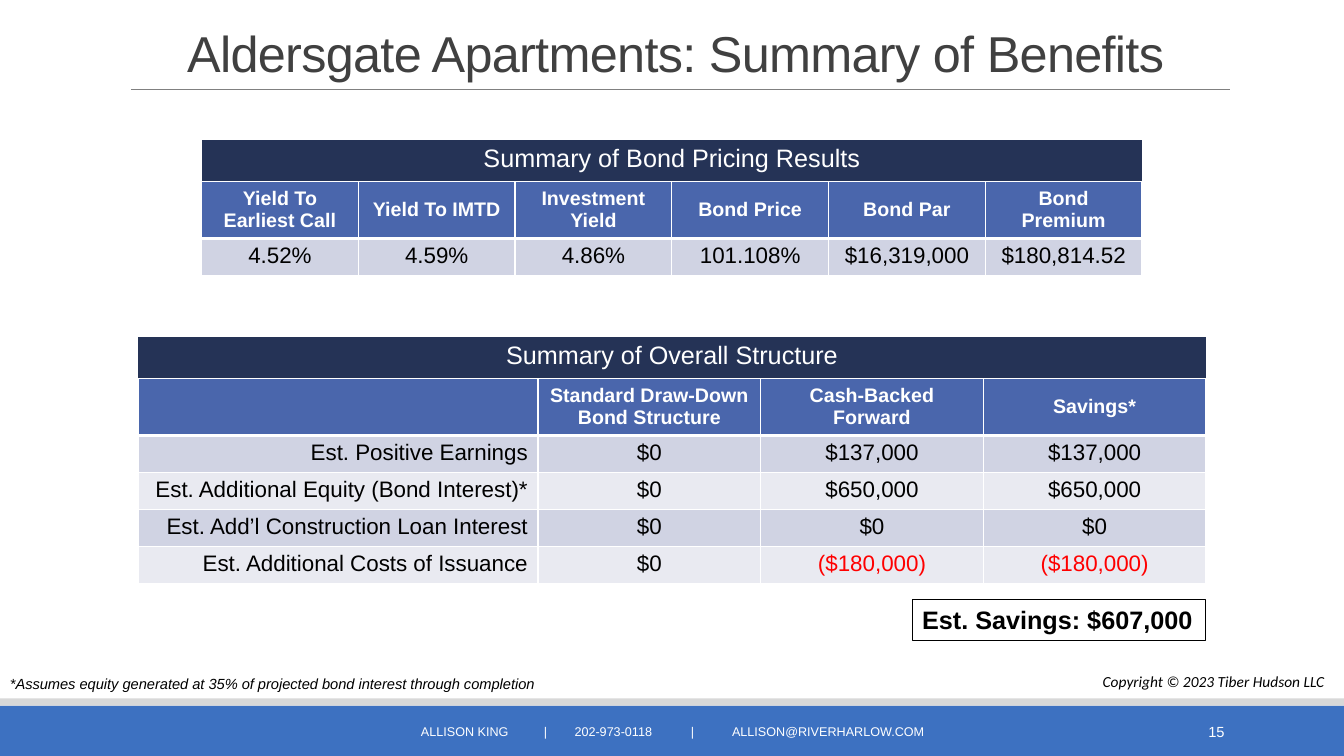
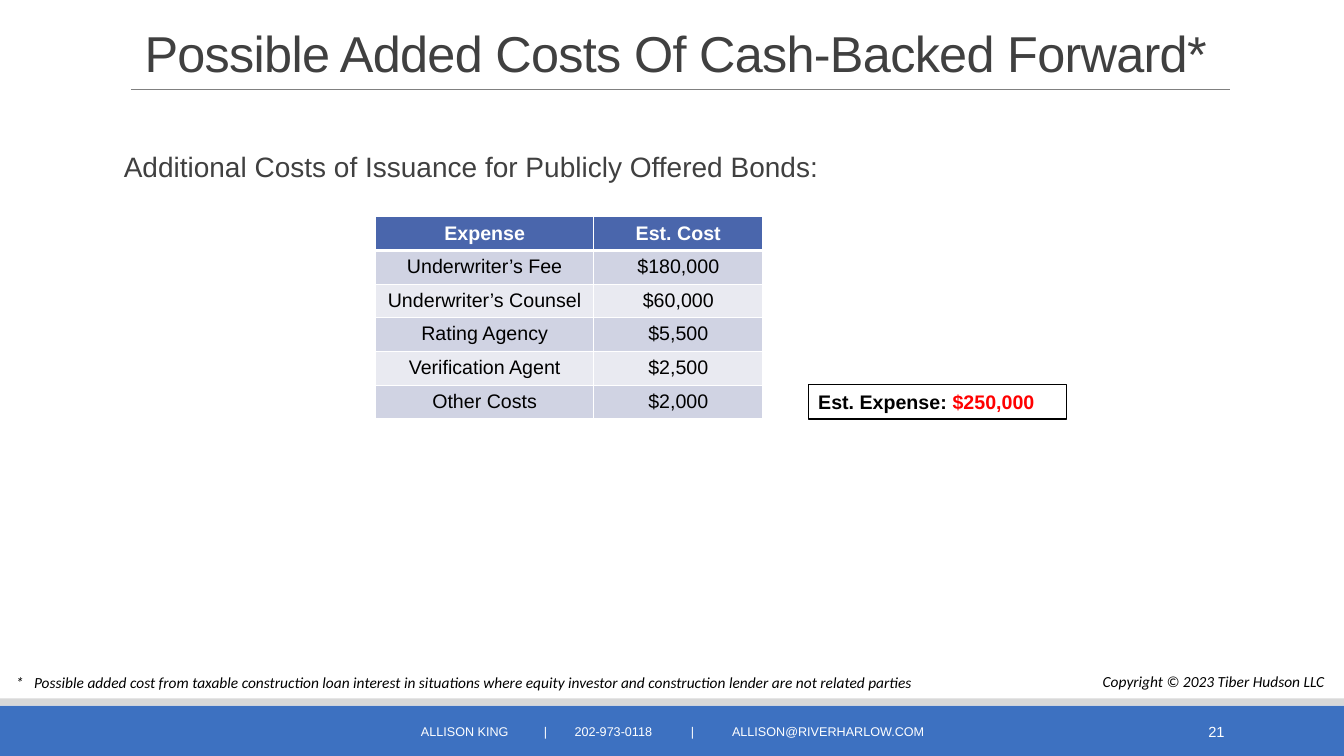
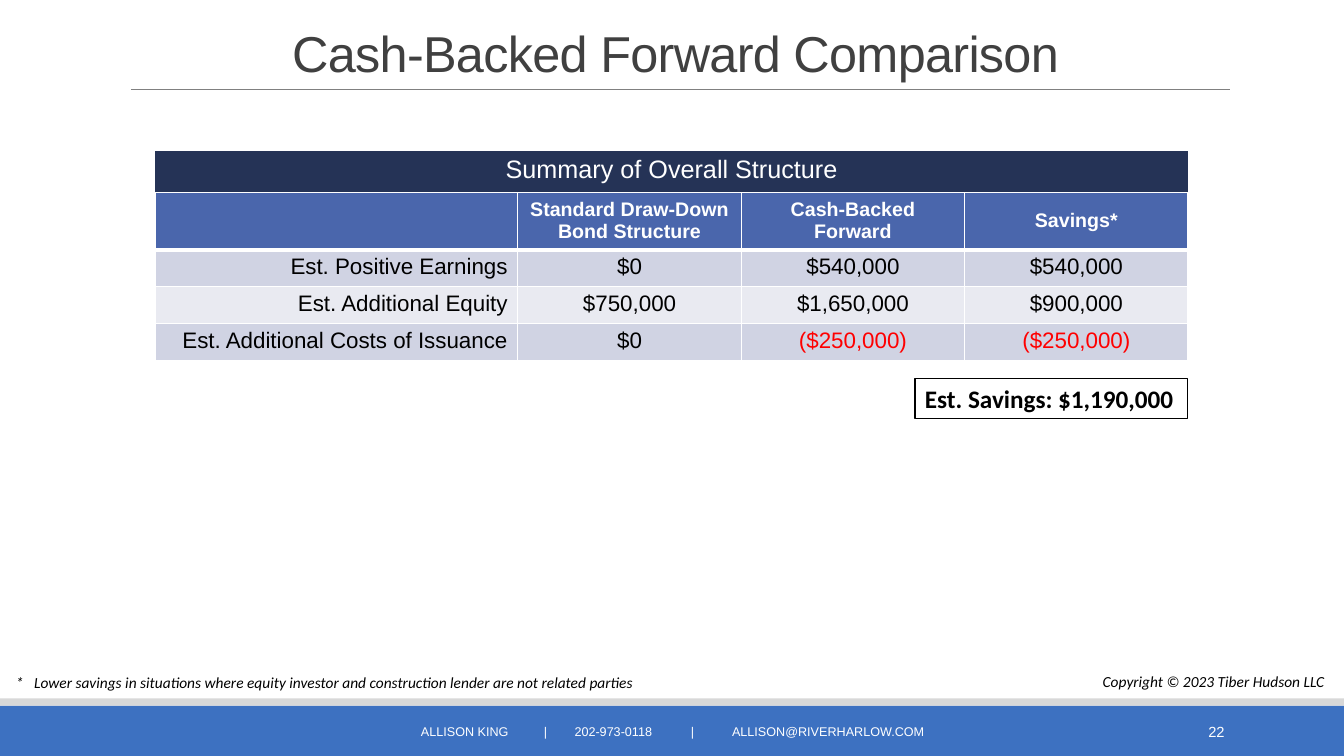
import pptx
import pptx.dml.color
import pptx.enum.shapes
import pptx.enum.text
import pptx.oxml.ns
import pptx.util
from lxml import etree

Cm, Pt = pptx.util.Cm, pptx.util.Pt
RGBColor = pptx.dml.color.RGBColor
ALIGN = pptx.enum.text.PP_ALIGN
ANCHOR = pptx.enum.text.MSO_ANCHOR
RECTANGLE = pptx.enum.shapes.MSO_SHAPE.RECTANGLE
qn = pptx.oxml.ns.qn

# Colours
WHITE = RGBColor(0xFF, 0xFF, 0xFF)
BLACK = RGBColor(0x00, 0x00, 0x00)
RED = RGBColor(0xFF, 0x00, 0x00)
CHARCOAL = RGBColor(0x40, 0x40, 0x40)
RULE_GREY = RGBColor(0x80, 0x80, 0x80)
BAND_GREY = RGBColor(0xD8, 0xD8, 0xD8)
BAND_BLUE = RGBColor(0x3D, 0x71, 0xC1)
NAVY = RGBColor(0x25, 0x33, 0x56)
HEADER_BLUE = RGBColor(0x4A, 0x66, 0xAC)
ROW_TINTS = [RGBColor(0xD0, 0xD3, 0xE3), RGBColor(0xE9, 0xEA, 0xF1)]

# Sizes in centimetres
BANNER_HEIGHT = 1.05
HEADER_HEIGHT = 1.44
ROW_HEIGHT = 0.93
CONTACT_TABS = [3.1, 3.87, 6.8, 7.84]
STRUCTURE_HEADER = ["", "Standard Draw-Down Bond Structure", "Cash-Backed Forward", "Savings*"]

# Content
pages = [
    {
        "title": "Aldersgate Apartments: Summary of Benefits",
        "number": "15",
        "grids": [
            {
                "left": 3.48, "top": 9.53, "widths": [10.08] + [5.61] * 3,
                "banner": "Summary of Overall Structure",
                "rows": [
                    STRUCTURE_HEADER,
                    ["Est. Positive Earnings", "$0", "$137,000", "$137,000"],
                    ["Est. Additional Equity (Bond Interest)*", "$0", "$650,000", "$650,000"],
                    ["Est. Add’l Construction Loan Interest", "$0", "$0", "$0"],
                    ["Est. Additional Costs of Issuance", "$0", "($180,000)", "($180,000)"],
                ],
            },
            {
                "left": 5.08, "top": 4.57, "widths": [3.95] * 6,
                "banner": "Summary of Bond Pricing Results", "label_align": ALIGN.CENTER,
                "rows": [
                    ["Yield To Earliest Call", "Yield To IMTD", "Investment Yield",
                     "Bond Price", "Bond Par", "Bond Premium"],
                    ["4.52%", "4.59%", "4.86%", "101.108%", "$16,319,000", "$180,814.52"],
                ],
            },
        ],
        "total": {"place": (22.99, 15.11, 7.39, 1.02), "size": 18, "font": "Arial",
                  "parts": [("Est. Savings: $607,000", BLACK)]},
        "footnote": {"place": (0, 16.87, 14.27, 0.74), "size": 10.5, "font": "Arial",
                     "text": "*Assumes equity generated at 35% of projected bond interest through completion"},
    },
    {
        "title": "Possible Added Costs Of Cash-Backed Forward*",
        "number": "21",
        "lead": "Additional Costs of Issuance for Publicly Offered Bonds:",
        "grids": [
            {
                "left": 9.47, "top": 5.46, "widths": [5.49, 4.27], "label_align": ALIGN.CENTER,
                "header_height": 0.85, "row_height": 0.85, "size": 14,
                "rows": [
                    ["Expense", "Est. Cost"],
                    ["Underwriter’s Fee", "$180,000"],
                    ["Underwriter’s Counsel", "$60,000"],
                    ["Rating Agency", "$5,500"],
                    ["Verification Agent", "$2,500"],
                    ["Other Costs", "$2,000"],
                ],
            },
        ],
        "total": {"place": (20.37, 9.7, 6.5, 0.86), "size": 14, "font": "Arial",
                  "parts": [("Est. Expense: ", BLACK), ("$250,000", RED)]},
        "footnote": {"place": (0.15, 16.84, 28.4, 0.74), "size": 11, "font": "Calibri",
                     "text": "*\tPossible added cost from taxable construction loan interest in situations "
                             "where equity investor and construction lender are not related parties"},
    },
    {
        "title": "Cash-Backed Forward Comparison",
        "number": "22",
        "grids": [
            {
                "left": 3.91, "top": 4.85, "widths": [9.14] + [5.63] * 3,
                "banner": "Summary of Overall Structure",
                "rows": [
                    STRUCTURE_HEADER,
                    ["Est. Positive Earnings", "$0", "$540,000", "$540,000"],
                    ["Est. Additional Equity", "$750,000", "$1,650,000", "$900,000"],
                    ["Est. Additional Costs of Issuance", "$0", "($250,000)", "($250,000)"],
                ],
            },
        ],
        "total": {"place": (23.06, 9.53, 6.88, 1.02), "size": 18, "font": "Calibri",
                  "parts": [("Est. Savings: $1,190,000", BLACK)]},
        "footnote": {"place": (0.15, 16.84, 28.4, 0.74), "size": 11, "font": "Calibri",
                     "text": "*\tLower savings in situations where equity investor and "
                             "construction lender are not related parties"},
    },
]


def write(frame, parts, size, align=ALIGN.LEFT, font="Arial", tabs=(), **styles):
    """Fill the first paragraph with (text, colour) runs, after setting its tab stops."""
    paragraph = frame.paragraphs[0]
    paragraph.alignment = align
    if tabs:
        stops = etree.SubElement(paragraph._p.get_or_add_pPr(), qn("a:tabLst"))
        for position in tabs:
            etree.SubElement(stops, qn("a:tab"), pos=str(Cm(position)), algn="l")
    for text, colour in parts:
        run = paragraph.add_run()
        run.text = text
        run.font.color.rgb = colour
        for name, value in {"name": font, "size": Pt(size), **styles}.items():
            setattr(run.font, name, value)
    return paragraph


def paint_cell(cell, fill, edges):
    """Set the cell's borders, as widths in points by edge (0 for none), and its fill."""
    properties = cell._tc.get_or_add_tcPr()
    for edge, width in zip(("lnL", "lnR", "lnT", "lnB"), edges):
        line = etree.SubElement(properties, qn("a:" + edge), w=str(Pt(width)))
        if width:
            colour = etree.SubElement(line, qn("a:solidFill"))
            etree.SubElement(colour, qn("a:srgbClr"), val=str(WHITE))
        else:
            etree.SubElement(line, qn("a:noFill"))
    cell.fill.solid()
    cell.fill.fore_color.rgb = fill


deck = pptx.Presentation()
deck.slide_width, deck.slide_height = Cm(33.87), Cm(19.05)

for page in pages:
    slide = deck.slides.add_slide(deck.slide_layouts[5])
    shapes = slide.shapes

    # Bands at the foot
    for top, height, colour in [(17.78, 1.27, BAND_BLUE), (17.6, 0.18, BAND_GREY)]:
        band = shapes.add_shape(RECTANGLE, 0, Cm(top), deck.slide_width, Cm(height))
        band.shadow.inherit = False
        band.fill.solid()
        band.fill.fore_color.rgb = colour
        band.line.fill.background()

    # Title and the rule under it
    rule = shapes.add_connector(pptx.enum.shapes.MSO_CONNECTOR.STRAIGHT,
                                Cm(3.3), Cm(2.26), Cm(30.99), Cm(2.26))
    rule.line.color.rgb = RULE_GREY
    rule.line.width = Pt(0.5)
    etree.SubElement(rule._element.spPr, qn("a:effectLst"))

    title = shapes.title
    title.left, title.top, title.width, title.height = Cm(3.05), Cm(0.79), Cm(27.94), Cm(1.32)
    title.text_frame.vertical_anchor = ANCHOR.MIDDLE
    title.text_frame.auto_size = pptx.enum.text.MSO_AUTO_SIZE.NONE
    heading = write(title.text_frame, [(page["title"], CHARCOAL)], 36, ALIGN.CENTER)
    heading.line_spacing = 0.85
    heading.runs[0].font._element.set("spc", "-50")

    # Page number, contact line, copyright and footnote
    note = page["footnote"]
    contact = "ALLISON KING\t|\t202-973-0118\t|\tALLISON@RIVERHARLOW.COM"
    small_texts = [
        ((27.48, 17.93, 3.63, 1.02), page["number"], WHITE, ANCHOR.MIDDLE, True,
         {"size": 10.5, "align": ALIGN.RIGHT}),
        ((10.36, 17.93, 13.39, 1.02), contact, WHITE, ANCHOR.MIDDLE, True,
         {"size": 9, "tabs": CONTACT_TABS}),
        ((27.54, 16.81, 6.15, 0.74), "Copyright © 2023 Tiber Hudson LLC", BLACK, ANCHOR.TOP, False,
         {"size": 11, "font": "Calibri", "italic": True}),
        (note["place"], note["text"], BLACK, ANCHOR.TOP, True,
         {"size": note["size"], "font": note["font"], "italic": True,
          "tabs": [0.46] if "\t" in note["text"] else []}),
    ]
    for place, text, colour, anchor, wrap, style in small_texts:
        frame = shapes.add_textbox(*map(Cm, place)).text_frame
        frame.word_wrap = wrap
        frame.vertical_anchor = anchor
        write(frame, [(text, colour)], **style)

    # Lead sentence
    if "lead" in page:
        lead = shapes.add_textbox(Cm(2.87), Cm(3.73), Cm(29.18), Cm(1.2)).text_frame
        lead.word_wrap = True
        write(lead, [(page["lead"], CHARCOAL)], 20).line_spacing = 0.9

    # Tables, each with its banner
    for grid in page["grids"]:
        rows, widths = grid["rows"], grid["widths"]
        heights = [grid.get("header_height", HEADER_HEIGHT)]
        heights += [grid.get("row_height", ROW_HEIGHT)] * (len(rows) - 1)
        table = shapes.add_table(len(rows), len(widths), Cm(grid["left"]), Cm(grid["top"]),
                                 Cm(sum(widths)), Cm(sum(heights))).table
        for column, width in zip(table.columns, widths):
            column.width = Cm(width)
        for r, (values, height) in enumerate(zip(rows, heights)):
            table.rows[r].height = Cm(height)
            for c, value in enumerate(values):
                cell = table.cell(r, c)
                if r == 0:
                    paint_cell(cell, HEADER_BLUE, (1, 1, 1, 3))
                    cell.vertical_anchor = ANCHOR.MIDDLE
                    if value:
                        write(cell.text_frame, [(value, WHITE)], 14, ALIGN.CENTER, bold=True)
                else:
                    paint_cell(cell, ROW_TINTS[(r - 1) % 2], (1, 1, 3 if r == 1 else 1, 1))
                    align = grid.get("label_align", ALIGN.RIGHT) if c == 0 else ALIGN.CENTER
                    colour = RED if value.startswith("(") else BLACK
                    write(cell.text_frame, [(value, colour)], grid.get("size", 16), align, bold=False)

        if "banner" in grid:
            banner = shapes.add_table(1, 1, Cm(grid["left"]), Cm(grid["top"] - BANNER_HEIGHT),
                                      Cm(sum(widths)), Cm(BANNER_HEIGHT)).table.cell(0, 0)
            paint_cell(banner, NAVY, (0, 0, 0, 0))
            write(banner.text_frame, [(grid["banner"], WHITE)], 18, ALIGN.CENTER, bold=False)

    # Boxed total
    total = page["total"]
    total_box = shapes.add_shape(RECTANGLE, *map(Cm, total["place"]))
    total_box.shadow.inherit = False
    total_box.fill.background()
    total_box.line.color.rgb = BLACK
    total_box.line.width = Pt(0.75)
    total_box.text_frame.word_wrap = True
    total_box.text_frame.vertical_anchor = ANCHOR.TOP
    write(total_box.text_frame, total["parts"], total["size"], font=total["font"], bold=True)

deck.save("out.pptx")
